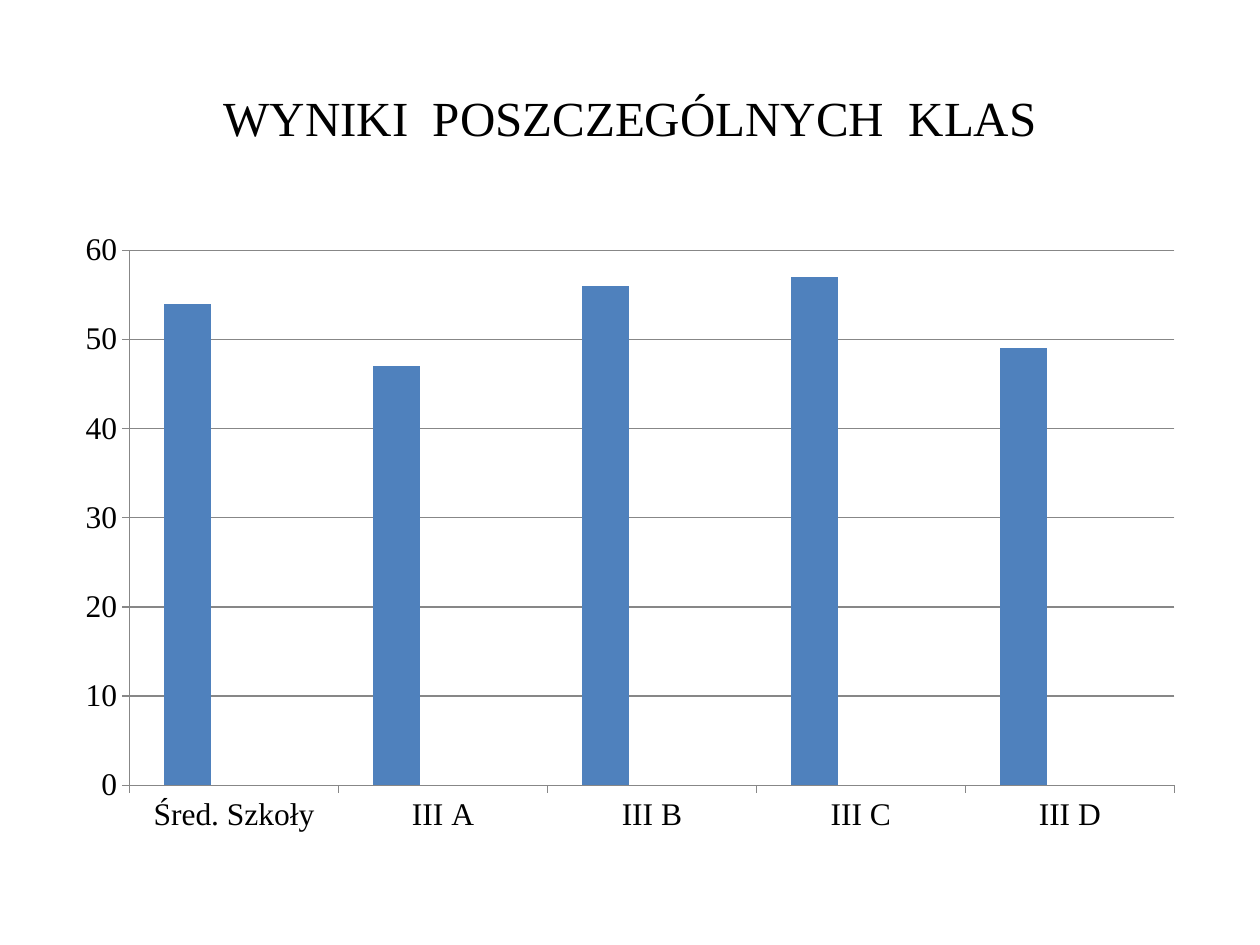
from dataclasses import dataclass

from pptx import Presentation
from pptx.chart.data import CategoryChartData
from pptx.dml.color import RGBColor
from pptx.enum.chart import XL_CHART_TYPE, XL_TICK_MARK
from pptx.enum.text import MSO_ANCHOR, PP_ALIGN
from pptx.util import Cm, Pt

COLUMNS = XL_CHART_TYPE.COLUMN_CLUSTERED
TICK_OUT = XL_TICK_MARK.OUTSIDE
TICK_NONE = XL_TICK_MARK.NONE
MIDDLE = MSO_ANCHOR.MIDDLE
CENTER = PP_ALIGN.CENTER

FONT = "Times New Roman"
BLACK = "000000"
GRAY = "878787"
LEFT, WIDTH = Cm(1.27), Cm(22.86)


@dataclass(frozen=True)
class Series:
    name: str
    values: tuple
    color: str


CLASSES = ("Śred. Szkoły", "III A", "III B", "III C", "III D")
NO_RESULTS = (None,) * len(CLASSES)
RESULTS = (
    Series("Series 1", (54, 47, 56, 57, 49), "4F81BD"),
    Series("Series 2", NO_RESULTS, "C0504D"),
    Series("Series 3", NO_RESULTS, "9BBB59"),
)


def rgb(color: str) -> RGBColor:
    return RGBColor.from_string(color)


def style_font(font, size: int) -> None:
    for attribute, value in {"name": FONT, "size": Pt(size), "bold": False}.items():
        setattr(font, attribute, value)
    font.color.rgb = rgb(BLACK)


def style_line(line) -> None:
    line.color.rgb = rgb(GRAY)
    line.width = Pt(0.75)


def add_heading(slide, text: str) -> None:
    frame = slide.shapes.add_textbox(LEFT, Cm(0.76), WIDTH, Cm(3.18)).text_frame
    frame.word_wrap = True
    frame.vertical_anchor = MIDDLE
    paragraph = frame.paragraphs[0]
    paragraph.alignment = CENTER
    run = paragraph.add_run()
    run.text = text
    style_font(run.font, 28)


def add_results_chart(slide) -> None:
    data = CategoryChartData()
    data.categories = CLASSES
    for series in RESULTS:
        data.add_series(series.name, series.values)
    chart = slide.shapes.add_chart(
        COLUMNS, LEFT, Cm(4.45), WIDTH, Cm(12.57), data
    ).chart
    chart.has_title = False
    chart.has_legend = False
    style_font(chart.font, 18)

    plot = chart.plots[0]
    plot.gap_width = 150
    plot.vary_by_categories = False
    for bars, series in zip(plot.series, RESULTS):
        bars.format.fill.solid()
        bars.format.fill.fore_color.rgb = rgb(series.color)

    for axis in (chart.category_axis, chart.value_axis):
        axis.major_tick_mark = TICK_OUT
        axis.minor_tick_mark = TICK_NONE
        style_line(axis.format.line)

    scale = {"minimum_scale": 0, "maximum_scale": 60, "major_unit": 10,
             "has_major_gridlines": True}
    for attribute, value in scale.items():
        setattr(chart.value_axis, attribute, value)
    style_line(chart.value_axis.major_gridlines.format.line)


def main() -> None:
    presentation = Presentation()
    presentation.slide_width = Cm(25.4)
    presentation.slide_height = Cm(19.05)
    slide = presentation.slides.add_slide(presentation.slide_layouts[6])
    add_heading(slide, "WYNIKI  POSZCZEGÓLNYCH  KLAS")
    add_results_chart(slide)
    presentation.save("out.pptx")


if __name__ == "__main__":
    main()
